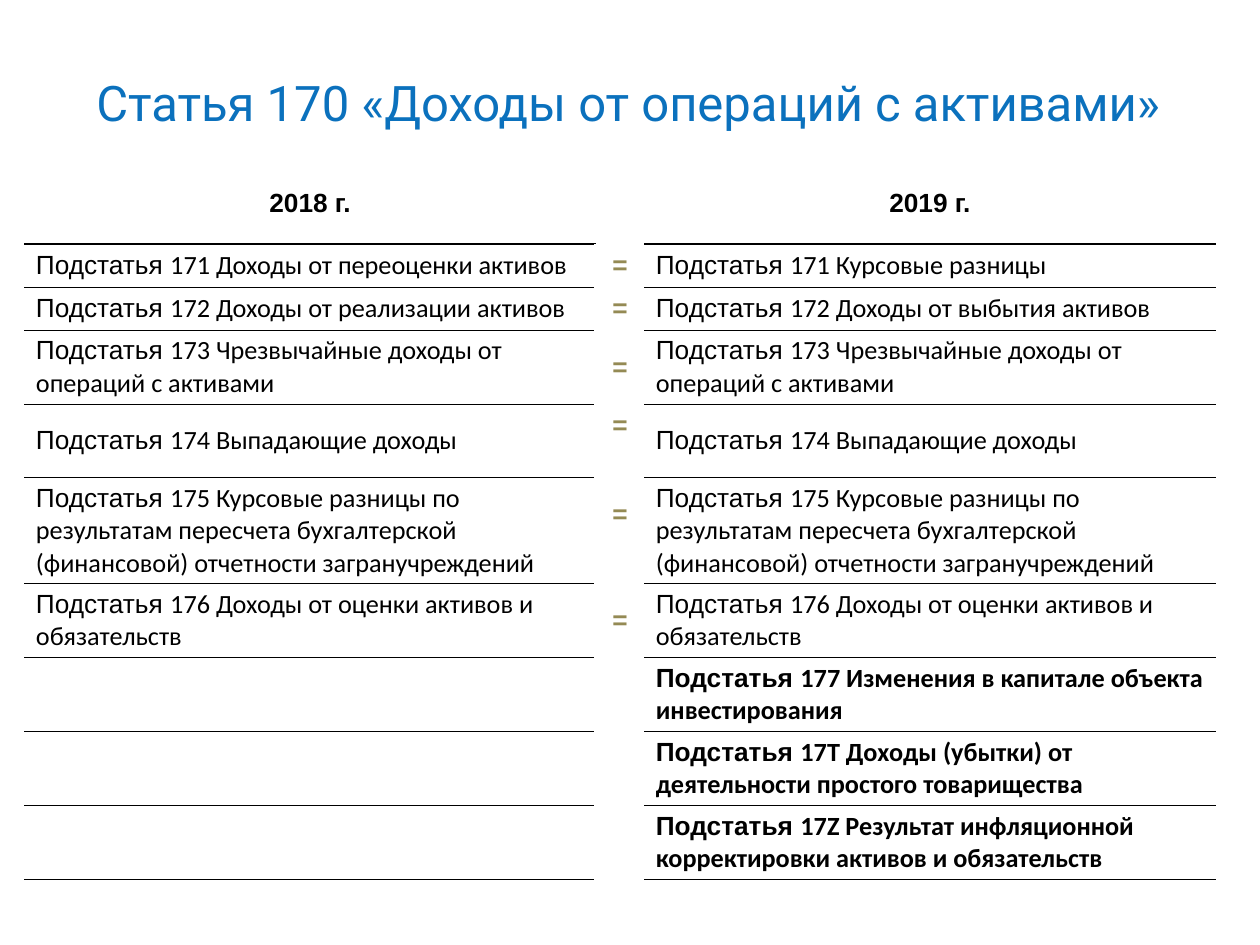
from lxml import etree
from pptx import Presentation
from pptx.dml.color import RGBColor
from pptx.enum.text import MSO_ANCHOR, PP_ALIGN
from pptx.oxml.ns import qn
from pptx.util import Pt

EMU_PER_PX = 914400 / 126
BLUE = RGBColor(0x0B, 0x71, 0xBD)
BLACK = RGBColor(0, 0, 0)
OLIVE = RGBColor(0x94, 0x8A, 0x54)
WHITE = RGBColor(0xFF, 0xFF, 0xFF)
CENTER, LEFT = PP_ALIGN.CENTER, PP_ALIGN.LEFT
MIDDLE = MSO_ANCHOR.MIDDLE

ABROAD = "175 Курсовые разницы по результатам пересчета бухгалтерской (финансовой) отчетности загранучреждений"
EXTREME = "173 Чрезвычайные доходы от операций с активами"
VALUATION = "176 Доходы от оценки активов и обязательств"
ARTICLES = [  # 2018, 2019, row height
    ("171 Доходы от переоценки активов", "171 Курсовые разницы", 43),
    ("172 Доходы от реализации активов", "172 Доходы от выбытия активов", 43),
    (EXTREME, EXTREME, 74),
    ("174 Выпадающие доходы", "174 Выпадающие доходы", 74),
    (ABROAD, ABROAD, 106),
    (VALUATION, VALUATION, 74),
    ("", "177 Изменения в капитале объекта инвестирования", 74),
    ("", "17T Доходы (убытки) от деятельности простого товарищества", 74),
    ("", "17Z Результат инфляционной корректировки активов и обязательств", 74),
]
RAISED_SIGNS = ("174", "175")  # their equals sign sits half a line higher
HEADER_HEIGHT = 82
COLUMN_WIDTHS = (570, 50, 570)
MARGINS = {"margin_left": 11, "margin_right": 11, "margin_top": 5, "margin_bottom": 5}


def px(length):
    return round(length * EMU_PER_PX)


def write(frame, runs, align):
    """Fill the first paragraph with (text, font, size, colour, bold) runs."""
    paragraph = frame.paragraphs[0]
    paragraph.alignment = align
    for text, name, size, color, bold in runs:
        run = paragraph.add_run()
        run.text = text
        run.font.name, run.font.size, run.font.bold = name, Pt(size), bold
        run.font.color.rgb = color


prs = Presentation()
prs.slide_width, prs.slide_height = px(1260), px(945)
slide = prs.slides.add_slide(prs.slide_layouts[6])

title = slide.shapes.add_textbox(px(84), px(66), px(1191), px(72)).text_frame
title.word_wrap = True
write(title, [("Статья 170 «Доходы от операций с активами»", "Roboto", 28, BLUE, False)], LEFT)

heights = [HEADER_HEIGHT] + [height for _, _, height in ARTICLES]
table = slide.shapes.add_table(
    len(heights), 3, px(25), px(162), px(sum(COLUMN_WIDTHS)), px(sum(heights))
).table
table.first_row = table.horz_banding = False
for column, width in zip(table.columns, COLUMN_WIDTHS):
    column.width = px(width)

for r, height in enumerate(heights):
    table.rows[r].height = px(height)
    for c in range(3):
        cell = table.cell(r, c)
        cell.vertical_anchor = MIDDLE
        for margin, length in MARGINS.items():
            setattr(cell, margin, px(length))

        # The rule under the header is thick; the middle column has none visible.
        edges = {"a:lnB": r + 1} if r == 0 else {"a:lnT": r, "a:lnB": r + 1}
        for tag, rule in edges.items():
            weight = 1.5 if rule == 1 and c != 1 else 0.5
            line = etree.SubElement(cell._tc.get_or_add_tcPr(), qn(tag), w=str(Pt(weight)))
            paint = etree.SubElement(line, qn("a:solidFill"))
            etree.SubElement(paint, qn("a:srgbClr"), val=str(WHITE if c == 1 else BLACK))
        cell.fill.background()

for c, year in ((0, "2018 г."), (2, "2019 г.")):
    write(table.cell(0, c).text_frame, [(year, "Arial", 15, BLACK, True)], CENTER)

for r, (before, after, _) in enumerate(ARTICLES, start=1):
    is_new = not before
    for c, article in ((0, before), (2, after)):
        if article:
            runs = [("Подстатья ", "Arial", 15, BLACK, is_new),
                    (article, "Calibri", 15, BLACK, is_new)]
            write(table.cell(r, c).text_frame, runs, LEFT)
    if not is_new:
        sign = table.cell(r, 1)
        write(sign.text_frame, [("=", "Arial", 15, OLIVE, True)], CENTER)
        if before.startswith(RAISED_SIGNS):
            sign.margin_bottom = px(37)

prs.save("out.pptx")
